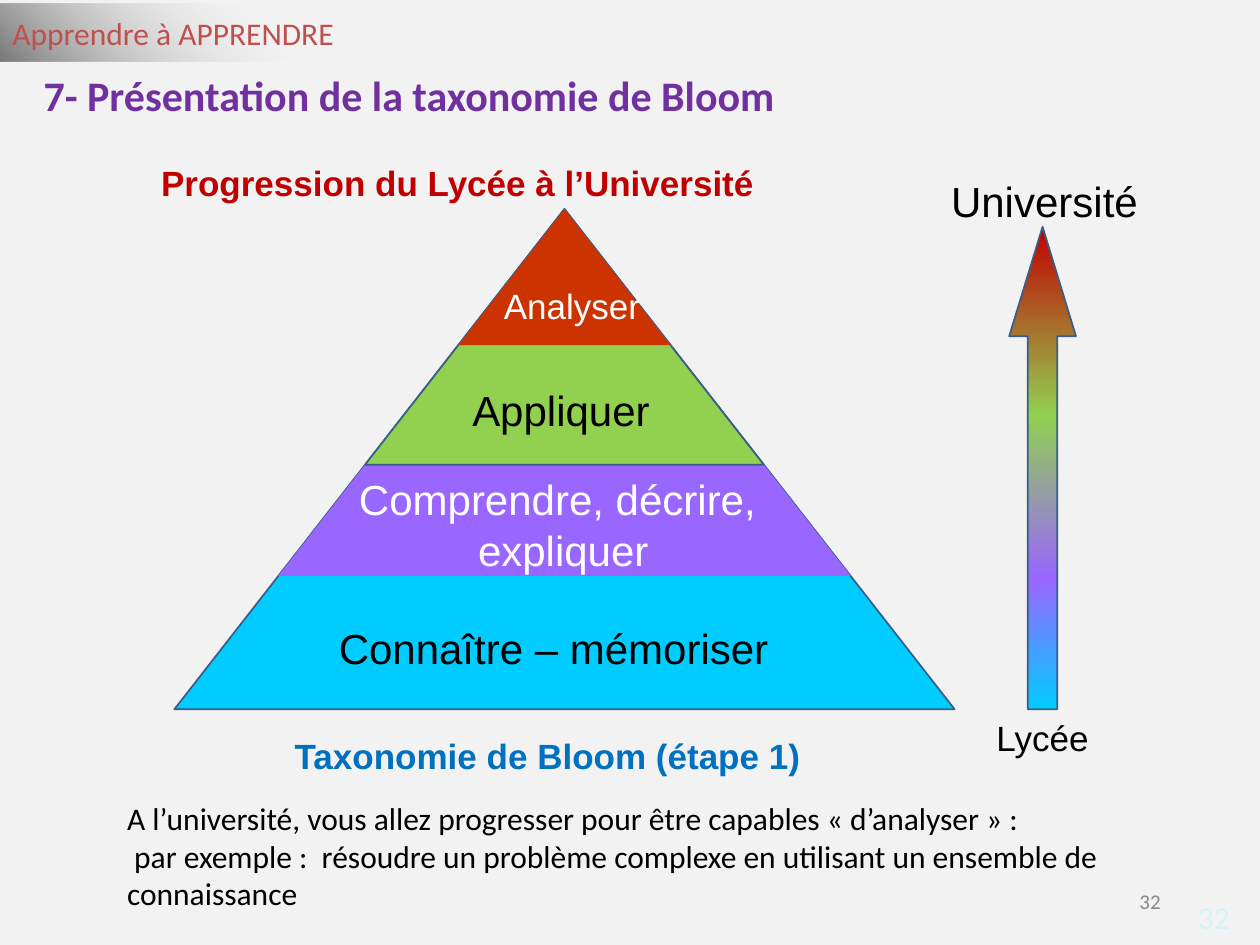
from dataclasses import dataclass

from pptx import Presentation
from pptx.dml.color import RGBColor
from pptx.enum.shapes import MSO_SHAPE
from pptx.enum.text import MSO_ANCHOR, MSO_AUTO_SIZE, PP_ALIGN
from pptx.oxml import parse_xml
from pptx.oxml.ns import nsdecls, qn
from pptx.util import Inches, Pt

TRIANGLE, RECT, UP_ARROW = (
    MSO_SHAPE.ISOSCELES_TRIANGLE, MSO_SHAPE.RECTANGLE, MSO_SHAPE.UP_ARROW)
LEFT, CENTER, RIGHT = PP_ALIGN.LEFT, PP_ALIGN.CENTER, PP_ALIGN.RIGHT
TOP, MIDDLE = MSO_ANCHOR.TOP, MSO_ANCHOR.MIDDLE
NO_FIT, GROW = MSO_AUTO_SIZE.NONE, MSO_AUTO_SIZE.SHAPE_TO_FIT_TEXT


@dataclass(frozen=True)
class Theme:
    body: str = "Calibri"
    label: str = "Arial"
    large: int = 24
    medium: int = 20
    normal: int = 18
    small: int = 12
    background: str = "F2F2F2"
    black: str = "000000"
    white: str = "FFFFFF"
    outline: str = "395E89"
    header: str = "C0504D"
    title: str = "7030A0"
    progress: str = "C00000"
    caption: str = "0070C0"
    number: str = "898989"
    faint: str = "D5F2F8"
    know: str = "00CCFF"
    understand: str = "9966FF"
    apply: str = "92D050"
    analyse: str = "CC3300"


T = Theme()
APEX_X, APEX_Y = 4.48, 1.66
WIDTH_PER_HEIGHT = 1.56


def rgb(value):
    return RGBColor.from_string(value)


def write(sp, lines, font, size, color, bold=False, align=LEFT, anchor=TOP):
    tf = sp.text_frame
    tf.word_wrap = True
    tf.vertical_anchor = anchor
    for i, line in enumerate(lines):
        p = tf.paragraphs[0] if i == 0 else tf.add_paragraph()
        p.alignment = align
        r = p.add_run()
        r.text = line
        r.font.name, r.font.size, r.font.bold = font, Pt(size), bold
        r.font.color.rgb = rgb(color)


def add_text(shapes, box, lines, font, size, color, **style):
    sp = shapes.add_textbox(*map(Inches, box))
    write(sp, lines, font, size, color, **style)
    sp.text_frame.auto_size = GROW


def add_shape(shapes, kind, box, fill=None, line=None):
    sp = shapes.add_shape(kind, *map(Inches, box))
    sp.shadow.inherit = False
    if fill:
        sp.fill.solid()
        sp.fill.fore_color.rgb = rgb(fill)
    else:
        sp.fill.background()
    if line:
        sp.line.color.rgb = rgb(line)
        sp.line.width = Pt(1)
    else:
        sp.line.fill.background()
    return sp


def set_gradient(sp, stops, direction):
    """Replace an empty fill by (position %, colour, opacity %) stops."""
    gs = "".join(
        f'<a:gs pos="{pos * 1000}"><a:srgbClr val="{color}">'
        f'<a:alpha val="{opacity * 1000}"/></a:srgbClr></a:gs>'
        for pos, color, opacity in stops)
    grad = parse_xml(f'<a:gradFill {nsdecls("a")} rotWithShape="1">'
                     f'<a:gsLst>{gs}</a:gsLst>{direction}</a:gradFill>')
    spPr = sp.element.spPr
    spPr.replace(spPr.find(qn("a:noFill")), grad)


def add_header(slide):
    sp = add_shape(slide.shapes, RECT, (0, 0.03, 3.9, 0.46))
    set_gradient(
        sp, [(0, "010101", 51), (60, "FEFEFE", 0), (100, "FEFEFE", 0)],
        '<a:path path="circle"><a:fillToRect t="100000" r="100000"/></a:path>')
    write(sp, ["Apprendre à APPRENDRE"], T.body, T.normal, T.header,
          anchor=MIDDLE)


def add_title(slide):
    sp = slide.shapes.title
    sp.left, sp.top, sp.width, sp.height = map(Inches, (0.17, 0.5, 6.24, 0.5))
    write(sp, ["\u00a07- Présentation de la taxonomie de Bloom".replace("\u00a0", " ")],
          T.body, T.large, T.title, bold=True)
    sp.text_frame.auto_size = NO_FIT


def add_pyramid(slide):
    """Stack triangles that share one apex, the largest at the back."""
    shapes = slide.shapes.add_group_shape().shapes
    levels = [(3.97, T.know, T.outline), (2.91, T.understand, None),
              (2.03, T.apply, T.outline), (1.08, T.analyse, None)]
    for height, fill, line in levels:
        width = height * WIDTH_PER_HEIGHT
        add_shape(shapes, TRIANGLE,
                  (APEX_X - width / 2, APEX_Y, width, height), fill, line)
    labels = [
        ((3.9, 2.21, 1.29, 0.44), ["Analyser"], T.medium, T.white, LEFT),
        ((3.65, 3, 1.63, 0.5), ["Appliquer"], T.large, T.black, LEFT),
        ((2.73, 3.71, 3.48, 0.91), ["Comprendre, décrire, ", "expliquer"],
         T.large, T.white, CENTER),
        ((2.59, 4.89, 3.65, 0.5), ["Connaître – mémoriser"],
         T.large, T.black, LEFT),
    ]
    for box, lines, size, color, align in labels:
        add_text(shapes, box, lines, T.label, size, color, align=align)


def add_progress_arrow(slide):
    sp = add_shape(slide.shapes, UP_ARROW, (8.01, 1.8, 0.53, 3.83),
                   line=T.outline)
    sp.adjustments[0], sp.adjustments[1] = 0.44, 1.64
    set_gradient(sp, [(0, T.progress, 100), (39, T.apply, 100),
                      (73, T.understand, 100), (100, T.know, 100)],
                 '<a:lin ang="5400000" scaled="0"/>')
    add_text(slide.shapes, (7.45, 1.34, 1.7, 0.5), ["Université"],
             T.label, T.large, T.black)
    add_text(slide.shapes, (7.81, 5.64, 1.25, 0.44), ["Lycée"],
             T.label, T.medium, T.black)


def add_captions(slide):
    add_text(slide.shapes, (1.18, 1.23, 5.02, 0.44),
             ["Progression du Lycée à l’Université"],
             T.label, T.medium, T.progress, bold=True)
    add_text(slide.shapes, (2.24, 5.78, 4.25, 0.44),
             ["Taxonomie de Bloom (étape 1)"],
             T.label, T.medium, T.caption, bold=True)
    add_text(slide.shapes, (0.91, 6.29, 9.31, 1.01),
             ["A l’université, vous allez progresser pour être capables "
              "« d’analyser » :",
              " par exemple :  résoudre un problème complexe en utilisant "
              "un ensemble de connaissance"],
             T.body, T.normal, T.black)


def add_page_numbers(slide):
    for box, size, color in [((7.06, 6.95, 2.25, 0.4), T.small, T.number),
                             ((9.06, 7.08, 0.8, 0.4), T.normal, T.faint)]:
        add_text(slide.shapes, box, ["32"], T.body, size, color,
                 align=RIGHT, anchor=MIDDLE)


def main():
    prs = Presentation()
    prs.slide_width, prs.slide_height = Inches(10), Inches(7.5)
    slide = prs.slides.add_slide(prs.slide_layouts[5])
    slide.background.fill.solid()
    slide.background.fill.fore_color.rgb = rgb(T.background)
    add_header(slide)
    add_title(slide)
    add_pyramid(slide)
    add_progress_arrow(slide)
    add_captions(slide)
    add_page_numbers(slide)
    prs.save("out.pptx")


if __name__ == "__main__":
    main()
